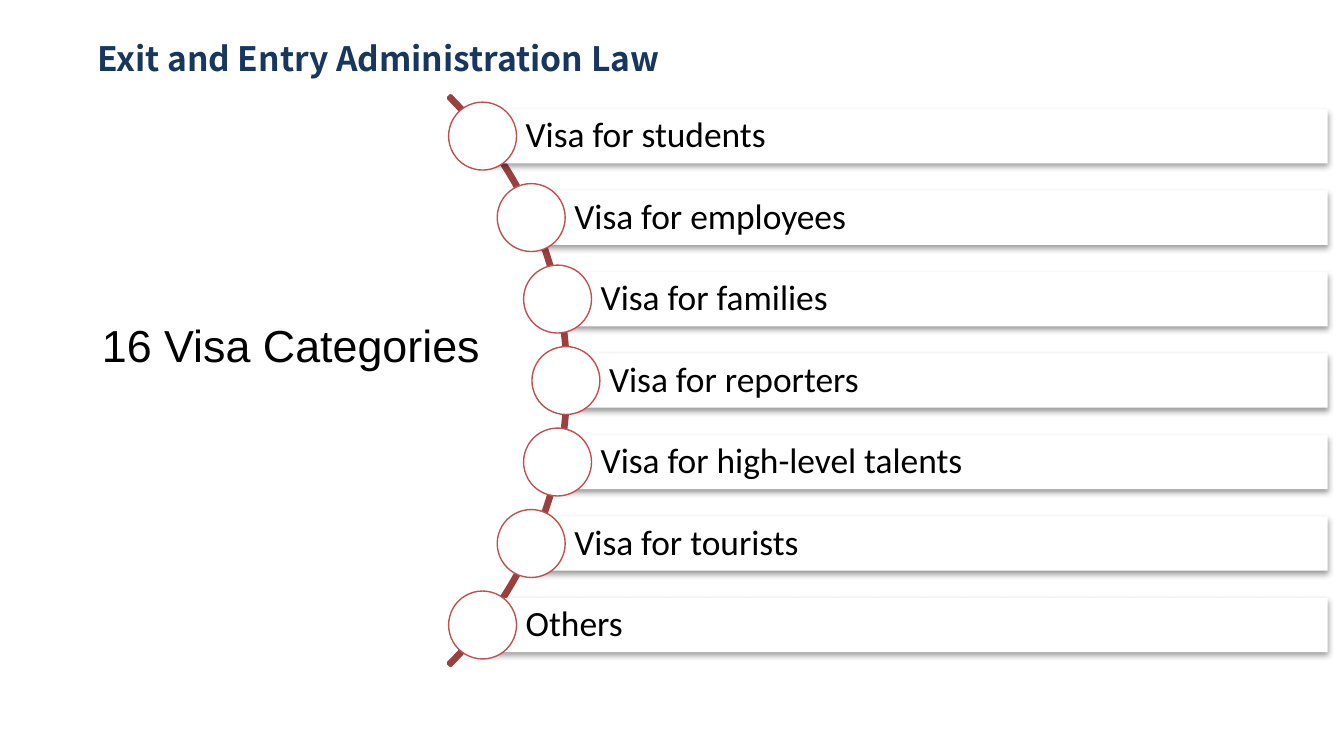
from dataclasses import dataclass
from math import sqrt

from lxml.etree import SubElement
from pptx import Presentation
from pptx.dml.color import RGBColor
from pptx.enum.shapes import MSO_SHAPE as Shape
from pptx.enum.text import MSO_ANCHOR as Anchor, MSO_AUTO_SIZE as AutoSize, PP_ALIGN as Align
from pptx.oxml.ns import qn
from pptx.util import Pt


@dataclass(frozen=True)
class Theme:
    title: str = "17375E"
    text: str = "000000"
    white: str = "FFFFFF"
    arc: str = "9A403E"
    ring: str = "C0504D"
    title_size: float = 18
    heading_size: float = 24
    item_size: float = 19


theme = Theme()


def write(box, text, font, size, color, bold=False):
    frame = box.text_frame
    frame.text = text
    frame.auto_size = AutoSize.NONE
    frame.vertical_anchor = Anchor.MIDDLE
    para = frame.paragraphs[0]
    para.alignment = Align.LEFT
    span = para.runs[0].font
    span.name, span.size, span.bold = font, Pt(size), bold
    span.color.rgb = RGBColor.from_string(color)
    return para


def add_shape(kind, left, top, width, height, fill=None, line=None, weight=0):
    shape = page.shapes.add_shape(kind, Pt(left), Pt(top), Pt(width), Pt(height))
    shape.shadow.inherit = False
    if fill:
        shape.fill.solid()
        shape.fill.fore_color.rgb = RGBColor.from_string(fill)
    else:
        shape.fill.background()
    if line:
        shape.line.color.rgb = RGBColor.from_string(line)
        shape.line.width = Pt(weight)
    else:
        shape.line.fill.background()
    return shape


deck = Presentation()
deck.slide_width, deck.slide_height = Pt(720), Pt(405)
page = deck.slides.add_slide(deck.slide_layouts[5])

# Title
title = page.shapes.title
title.left, title.top, title.width, title.height = Pt(44.9), Pt(16.6), Pt(327), Pt(29)
write(title, "Exit and Entry Administration Law", "Noto Sans CJK SC",
      theme.title_size, theme.title, bold=True)
title.text_frame.word_wrap = False

# Heading on the left
heading = page.shapes.add_textbox(Pt(47.5), Pt(166.5), Pt(239), Pt(36))
write(heading, "16 Visa Categories", "Arial", theme.heading_size, theme.text)
heading.text_frame.word_wrap = True

# Arc that carries the circles
center_x, center_y = 88.9, 203.9
diameter, radius = 431.3, 214.3
arc = add_shape(Shape.BLOCK_ARC, center_x - diameter / 2, center_y - diameter / 2,
                diameter, diameter, line=theme.arc, weight=2)
arc.adjustments[0] = 189
arc.adjustments[1] = 27
arc.adjustments[2] = 1.6 / diameter

# Visa bars, each starting at a circle on the arc
visas = ["Visa for students", "Visa for employees", "Visa for families",
         "Visa for reporters", "Visa for high-level talents",
         "Visa for tourists", "Others"]
step, bar_height, bar_right, circle = 43.65, 29.1, 711.3, 36.4

for index, visa in enumerate(visas):
    offset = (index - (len(visas) - 1) / 2) * step
    x = center_x + sqrt(radius ** 2 - offset ** 2)
    y = center_y + offset

    bar = add_shape(Shape.RECTANGLE, x, y - bar_height / 2,
                    bar_right - x, bar_height, fill=theme.white)
    para = write(bar, visa, "Calibri", theme.item_size, theme.text)
    para.line_spacing = 0.9
    bar.text_frame.margin_left = Pt(23.1)
    bar.text_frame.margin_right = Pt(3.6)

    # Soft shadow below the bar
    effects = bar._element.spPr.find(qn("a:effectLst"))
    shadow = SubElement(effects, qn("a:outerShdw"), blurRad=str(Pt(3.1)),
                        dist=str(Pt(1.6)), dir="5400000", rotWithShape="0")
    tint = SubElement(shadow, qn("a:srgbClr"), val=theme.text)
    SubElement(tint, qn("a:alpha"), val="38000")

    add_shape(Shape.OVAL, x - circle / 2, y - circle / 2, circle, circle,
              fill=theme.white, line=theme.ring, weight=0.75)

deck.save("out.pptx")
